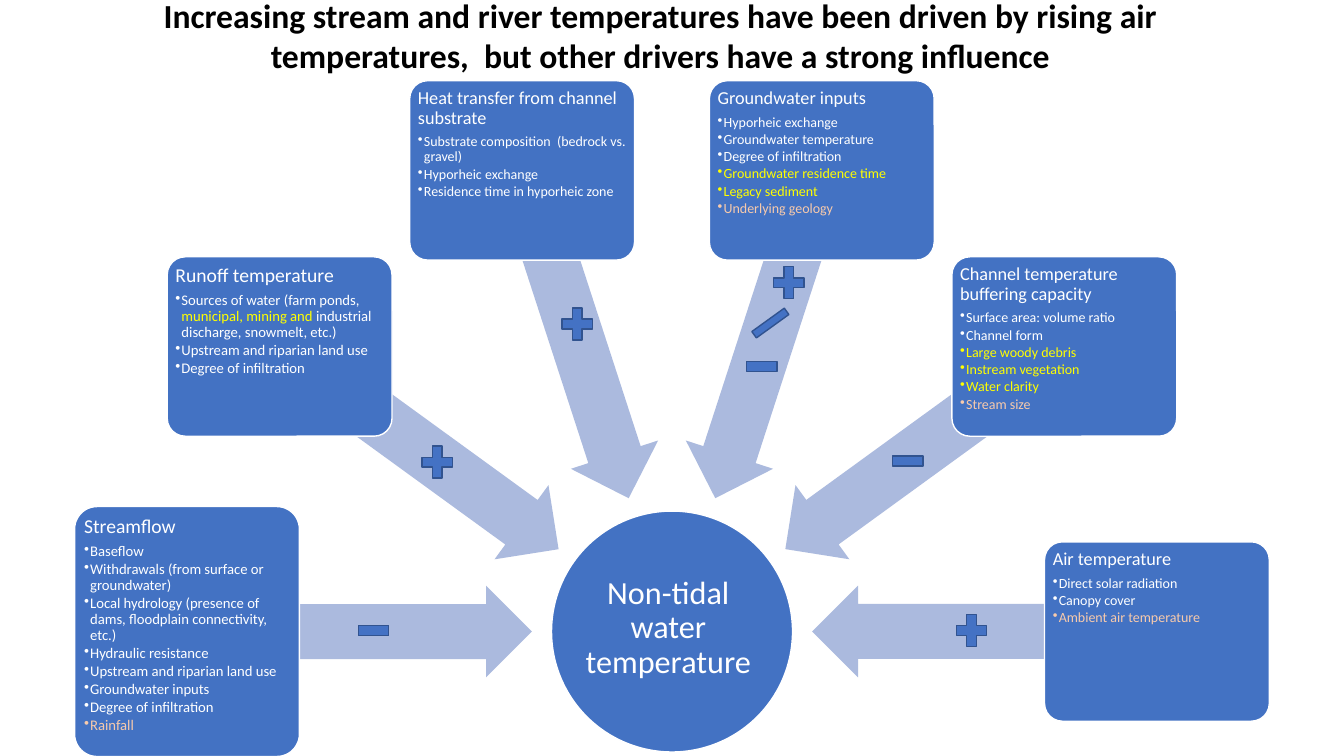
from math import cos, radians, sin

from lxml.etree import SubElement
from pptx import Presentation
from pptx.dml.color import RGBColor
from pptx.enum.shapes import MSO_SHAPE as Shape
from pptx.enum.text import MSO_ANCHOR as Anchor, MSO_AUTO_SIZE as AutoSize, PP_ALIGN as Align
from pptx.oxml.ns import qn
from pptx.util import Emu, Pt

PX = 9144
FONT = "Calibri"
COLORS = {
    "node": "4372C3", "arrow": "ABBADE", "sign": "4472C4", "sign_line": "31538F",
    "white": "FFFFFF", "yellow": "FFFF00", "peach": "F7CAAC", "black": "000000",
}
CENTER_X, CENTER_Y = 666.5, 626.5
ARROW_RADIUS, BOX_RADIUS = 310, 481
ARROW_WIDTH, ARROW_HEIGHT = 342, 91
BOX_WIDTH = 223
FIRST_ANGLE, ANGLE_STEP = 180, 36

# Heading, heading size, bullet size, box height, bullets
DRIVERS = [
    ("Streamflow", 14, 10.5, 248, [
        "Baseflow",
        "Withdrawals (from surface or groundwater)",
        "Local hydrology (presence of dams, floodplain connectivity, etc.)",
        "Hydraulic resistance",
        "Upstream and riparian land use",
        "Groundwater inputs",
        "Degree of infiltration",
        [("Rainfall", "peach")],
    ]),
    ("Runoff temperature", 14, 10.5, 178, [
        [("Sources of water (farm ponds, ", "white"),
         ("municipal, mining and ", "yellow"),
         ("industrial discharge, snowmelt, etc.)", "white")],
        "Upstream and riparian land use",
        "Degree of infiltration",
    ]),
    ("Heat transfer from channel substrate", 13, 10, 178, [
        "Substrate composition  (bedrock vs. gravel)",
        "Hyporheic exchange",
        "Residence time in hyporheic zone",
    ]),
    ("Groundwater inputs", 13, 10, 178, [
        "Hyporheic exchange",
        "Groundwater temperature",
        "Degree of infiltration",
        [("Groundwater residence time", "yellow")],
        [("Legacy sediment", "yellow")],
        [("Underlying geology", "peach")],
    ]),
    ("Channel temperature buffering capacity", 13, 10, 178, [
        "Surface area: volume ratio",
        "Channel form",
        [("Large woody debris", "yellow")],
        [("Instream vegetation", "yellow")],
        [("Water clarity", "yellow")],
        [("Stream size", "peach")],
    ]),
    ("Air temperature", 13, 10, 178, [
        "Direct solar radiation",
        "Canopy cover",
        [("Ambient air temperature", "peach")],
    ]),
]

PLUS, MINUS = Shape.MATH_PLUS, Shape.MATH_MINUS
SIGNS = [
    (PLUS, 943, 604), (PLUS, 413, 437), (PLUS, 552, 300),
    (MINUS, 350, 604), (MINUS, 735, 342), (MINUS, 880, 436), (PLUS, 762, 259),
]


def px(length):
    """Convert pixels to EMU."""
    return Emu(round(length * PX))


def rgb(name):
    """Look up a named colour."""
    return RGBColor.from_string(COLORS[name])


def add_figure(slide, kind, left, top, width, height, fill, line=None, rotation=0, adjust=()):
    """Add a filled preset shape with an optional outline."""
    shape = slide.shapes.add_shape(kind, px(left), px(top), px(width), px(height))
    shape.shadow.inherit = False
    shape.rotation = rotation
    for index, value in enumerate(adjust):
        shape.adjustments[index] = value
    shape.fill.solid()
    shape.fill.fore_color.rgb = rgb(fill)
    if line:
        shape.line.color.rgb = rgb(line)
        shape.line.width = Pt(1)
    else:
        shape.line.fill.background()
    return shape


def prepare_frame(shape, inset, anchor=Anchor.TOP):
    """Set wrapping, insets and anchor, and return the text frame."""
    frame = shape.text_frame
    frame.word_wrap = True
    frame.vertical_anchor = anchor
    frame.margin_left = frame.margin_right = px(inset)
    frame.margin_top = frame.margin_bottom = px(inset)
    return frame


def add_bullet(paragraph, color):
    """Give a paragraph a hanging bullet in the named colour."""
    paragraph.level = 1
    properties = paragraph._p.get_or_add_pPr()
    properties.set("marL", str(px(6)))
    properties.set("indent", str(-px(6)))
    bullet_color = SubElement(properties, qn("a:buClr"))
    SubElement(bullet_color, qn("a:srgbClr"), val=COLORS[color])
    SubElement(properties, qn("a:buChar"), char="•")


def write(paragraph, text, size, color="white", bold=False, align=Align.LEFT,
          spacing=None, before=None, bullet=False):
    """Write a string or a list of coloured runs into a paragraph."""
    runs = [(text, color)] if isinstance(text, str) else text
    if bullet:
        add_bullet(paragraph, runs[0][1])
    paragraph.alignment = align
    if spacing:
        paragraph.line_spacing = spacing
    if before:
        paragraph.space_before = Pt(before)
    for words, run_color in runs:
        run = paragraph.add_run()
        run.text = words
        run.font.name = FONT
        run.font.size = Pt(size)
        run.font.bold = bold
        run.font.color.rgb = rgb(run_color)


def add_label(slide, text, left, top, width, height, inset=0, anchor=Anchor.TOP, **style):
    """Add a centred text box and return its frame."""
    box = slide.shapes.add_textbox(px(left), px(top), px(width), px(height))
    frame = prepare_frame(box, inset, anchor)
    write(frame.paragraphs[0], text, align=Align.CENTER, **style)
    return frame


def add_hub(slide):
    """Add the central circle and its label."""
    add_figure(slide, Shape.OVAL, 547, 507, 239, 239, "node", "white")
    add_label(slide, "Non-tidal water temperature", 571, 539, 184, 169, inset=2,
              anchor=Anchor.MIDDLE, size=23, spacing=0.9)


def add_driver(slide, angle, heading, heading_size, bullet_size, height, bullets):
    """Add one driver box and its arrow toward the hub."""
    across, down = cos(radians(angle)), sin(radians(angle))
    add_figure(slide, Shape.LEFT_ARROW,
               CENTER_X + ARROW_RADIUS * across - ARROW_WIDTH / 2,
               CENTER_Y + ARROW_RADIUS * down - ARROW_HEIGHT / 2,
               ARROW_WIDTH, ARROW_HEIGHT, "arrow", rotation=angle % 360, adjust=(0.6, 0.5))
    box = add_figure(slide, Shape.ROUNDED_RECTANGLE,
                     CENTER_X + BOX_RADIUS * across - BOX_WIDTH / 2,
                     CENTER_Y + BOX_RADIUS * down - height / 2,
                     BOX_WIDTH, height, "node", "white", adjust=(0.1,))
    frame = prepare_frame(box, 3)
    write(frame.paragraphs[0], heading, heading_size, spacing=0.9)
    for index, bullet in enumerate(bullets):
        before = 0.15 * bullet_size if index else 0.35 * heading_size
        write(frame.add_paragraph(), bullet, bullet_size, spacing=0.9, before=before, bullet=True)


def main():
    """Build the slide and save it."""
    presentation = Presentation()
    presentation.slide_width, presentation.slide_height = px(1333), px(750)
    slide = presentation.slides.add_slide(presentation.slide_layouts[6])
    add_hub(slide)
    for index, driver in enumerate(DRIVERS):
        add_driver(slide, FIRST_ANGLE + ANGLE_STEP * index, *driver)
    for kind, left, top in SIGNS:
        add_figure(slide, kind, left, top, 41, 43, "sign", "sign_line")
    add_figure(slide, MINUS, 737, 304, 54, 33, "sign", "sign_line", rotation=144.2)
    title = add_label(slide, "Increasing stream and river temperatures have been driven by rising air "
                      "temperatures,  but other drivers have a strong influence",
                      105, -5, 1100, 81, size=24, color="black", bold=True)
    title.auto_size = AutoSize.SHAPE_TO_FIT_TEXT
    presentation.save("out.pptx")


if __name__ == "__main__":
    main()
